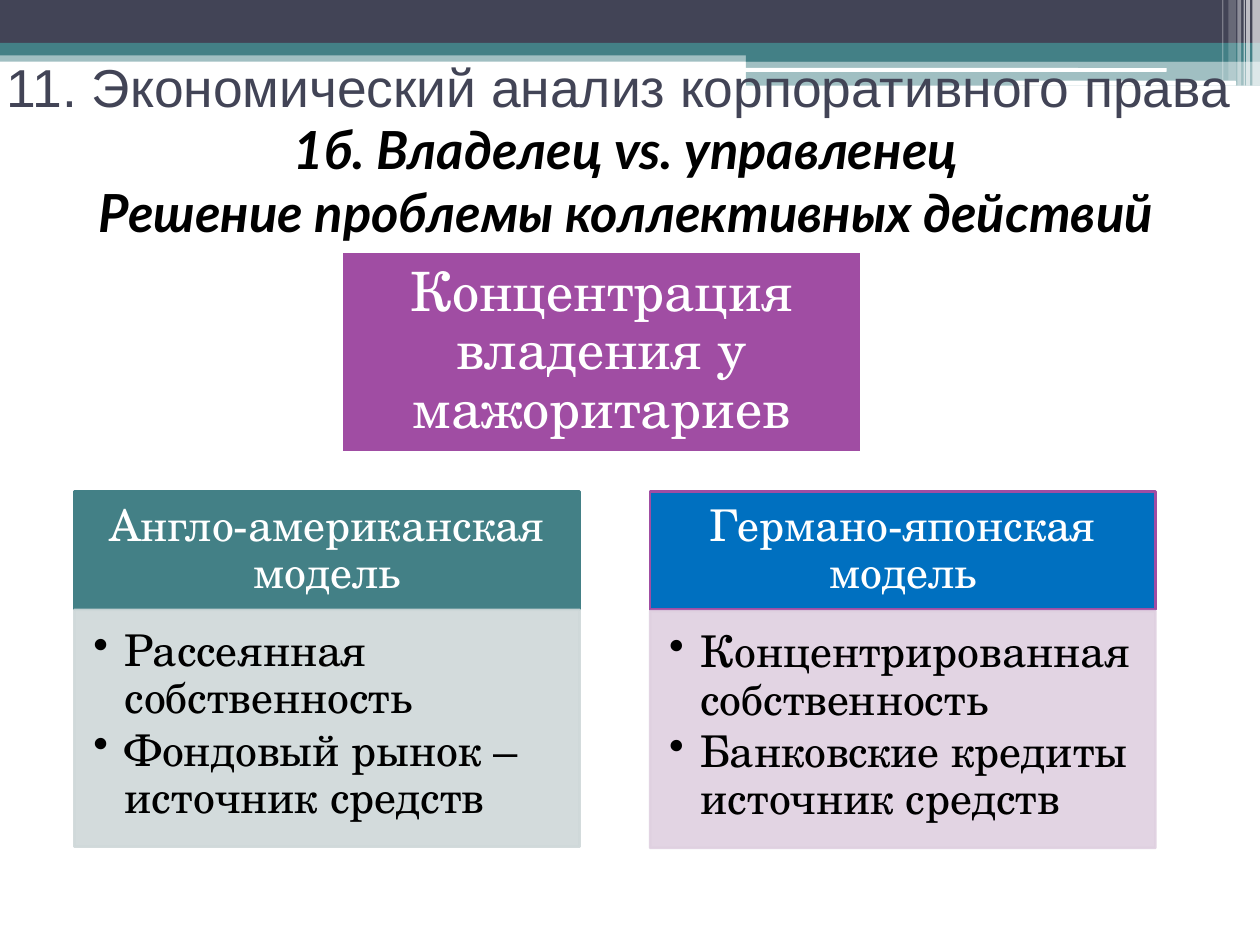
from dataclasses import dataclass
from typing import Optional

from lxml.etree import SubElement
from pptx import Presentation
from pptx.dml.color import RGBColor
from pptx.enum.shapes import MSO_SHAPE
from pptx.enum.text import MSO_ANCHOR, PP_ALIGN
from pptx.oxml.ns import qn
from pptx.util import Inches, Pt

COLORS = {
    "white": "FFFFFF", "black": "000000", "navy": "424456", "teal": "438086",
    "purple": "A04DA3", "blue": "0070C0", "pale_teal": "CFD8D9", "pale_purple": "DFD0E0",
}
BODY_FONT = "TeX Gyre Schola"


@dataclass
class Box:
    left: float
    top: float
    width: float
    height: float
    fill: str
    opacity: int = 100
    line: Optional[str] = None
    rounded: bool = False


@dataclass
class Model:
    left: float
    body_top: float
    name: str
    points: list[str]
    head_fill: str
    head_line: str
    body_fill: str


def rgb(name: str) -> RGBColor:
    return RGBColor.from_string(COLORS[name])


def set_opacity(fill, percent: int) -> None:
    if percent < 100:
        color = fill._xPr.find(qn("a:solidFill"))[0]
        SubElement(color, qn("a:alpha"), val=str(percent * 1000))


def add_box(slide, box: Box):
    kind = MSO_SHAPE.ROUNDED_RECTANGLE if box.rounded else MSO_SHAPE.RECTANGLE
    shape = slide.shapes.add_shape(
        kind, Inches(box.left), Inches(box.top), Inches(box.width), Inches(box.height))
    shape.shadow.inherit = False
    shape.fill.solid()
    shape.fill.fore_color.rgb = rgb(box.fill)
    set_opacity(shape.fill, box.opacity)
    if box.line:
        shape.line.color.rgb = rgb(box.line)
        shape.line.width = Pt(1.5)
        set_opacity(shape.line.fill, box.opacity)
    else:
        shape.line.fill.background()
    return shape


def add_bullet(paragraph) -> None:
    properties = paragraph._p.get_or_add_pPr()
    properties.set("marL", str(Inches(0.25)))
    properties.set("indent", str(-Inches(0.25)))
    SubElement(properties, qn("a:buChar"), char="•")


def write(shape, lines: list[str], size: float, color: str, font: str = BODY_FONT,
          insets: tuple = (0.1, 0.05, 0.1, 0.05), spacing: float = 1.0,
          bullets: bool = False, strong: bool = False) -> None:
    frame = shape.text_frame
    frame.word_wrap = True
    frame.vertical_anchor = MSO_ANCHOR.TOP if bullets else MSO_ANCHOR.MIDDLE
    for side, inset in zip(("left", "top", "right", "bottom"), insets):
        setattr(frame, f"margin_{side}", Inches(inset))
    font_format = {"name": font, "size": Pt(size), "bold": strong, "italic": strong}
    for index, line in enumerate(lines):
        paragraph = frame.add_paragraph() if index else frame.paragraphs[0]
        paragraph.alignment = PP_ALIGN.LEFT if bullets else PP_ALIGN.CENTER
        paragraph.line_spacing = spacing
        if bullets:
            paragraph.space_after = Pt(3)
            add_bullet(paragraph)
        paragraph.text = line
        for run in paragraph.runs:
            for attribute, value in font_format.items():
                setattr(run.font, attribute, value)
            run.font.color.rgb = rgb(color)


def add_text(slide, left: float, top: float, width: float, height: float):
    return slide.shapes.add_textbox(Inches(left), Inches(top), Inches(width), Inches(height))


def add_model(slide, model: Model) -> None:
    head = add_box(slide, Box(model.left, 3.9, 4.01, 0.94, model.head_fill, line=model.head_line))
    write(head, [model.name], 25, "white", insets=(0.19, 0.11, 0.19, 0.11), spacing=0.9)
    body = add_box(slide, Box(model.left, model.body_top, 4.01, 1.88, model.body_fill,
                              opacity=90, line=model.body_fill))
    write(body, model.points, 25, "black", insets=(0.15, 0.15, 0.19, 0.22),
          spacing=0.9, bullets=True)


# Header bands, then the thin stripes at the right edge
BANDS = [
    Box(0, 0.4, 10, 0.09, "teal", 50),
    Box(0, 0, 10, 0.34, "navy"),
    Box(0, 0.34, 10, 0.1, "teal"),
    Box(5.92, 0.39, 4.08, 0.1, "teal"),
    Box(5.92, 0.48, 4.08, 0.2, "teal", 50),
    Box(5.91, 0.54, 3.35, 0.03, "white", rounded=True),
    Box(8.06, 0.64, 1.75, 0.04, "white", rounded=True),
]
STRIPES = [  # left, width, height, opacity
    (9.94, 0.06, 0.68, 65), (9.89, 0.03, 0.68, 65), (9.87, 0.01, 0.68, 60),
    (9.82, 0.03, 0.68, 40), (9.75, 0.06, 0.64, 20), (9.7, 0.01, 0.64, 30),
]
MODELS = [
    Model(0.59, 4.84, "Англо-американская модель",
          ["Рассеянная собственность", "Фондовый рынок –источник средств"],
          "teal", "teal", "pale_teal"),
    Model(5.16, 4.85, "Германо-японская модель",
          ["Концентрированная собственность", "Банковские кредиты источник средств"],
          "blue", "purple", "pale_purple"),
]


def main() -> None:
    presentation = Presentation()
    presentation.slide_width, presentation.slide_height = Inches(10), Inches(7.5)
    slide = presentation.slides.add_slide(presentation.slide_layouts[6])

    for band in BANDS:
        add_box(slide, band)
    for left, width, height, opacity in STRIPES:
        add_box(slide, Box(left, 0, width, height, "white", opacity))

    # Slide title and chapter heading
    write(add_text(slide, -0.09, 0.84, 10.12, 1.17),
          ["1б. Владелец vs. управленец\vРешение проблемы коллективных действий"],
          30, "black", font="Lato", strong=True)

    # Common solution above the two models
    solution = add_box(slide, Box(2.71, 2, 4.13, 1.59, "purple", line="white"))
    write(solution, ["Концентрация владения у мажоритариев"], 31, "white",
          insets=(0.13,) * 4, spacing=0.9)

    write(add_text(slide, -0.15, 0.03, 10.12, 1.31),
          ["11. Экономический анализ корпоративного права"], 30.5, "navy", font="Arial")

    for model in MODELS:
        add_model(slide, model)

    presentation.save("out.pptx")


if __name__ == "__main__":
    main()
